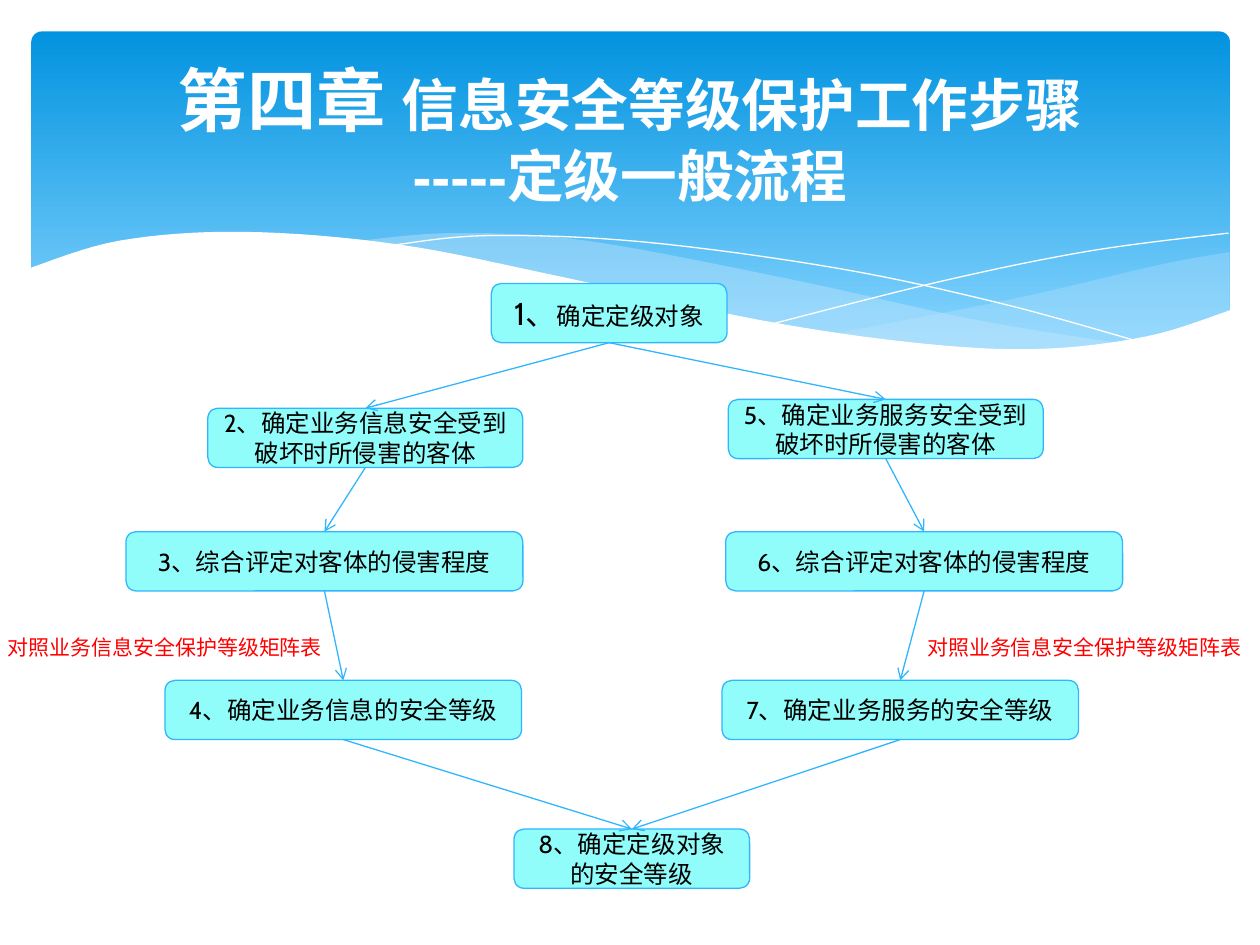
from lxml.etree import SubElement
from pptx import Presentation
from pptx.dml.color import RGBColor
from pptx.enum.shapes import MSO_CONNECTOR, MSO_SHAPE
from pptx.enum.text import MSO_ANCHOR, PP_ALIGN
from pptx.oxml.ns import qn
from pptx.util import Inches, Pt

COLORS = {
    "sky_top": "0293E0", "sky_bottom": "83D3FE", "wave": "C6E7FC", "white": "FFFFFF",
    "box": "91FDFA", "line": "31B6FD", "text": "000000", "label": "FF0000",
}
BODY_FONT, CJK_FONT, TITLE_CJK_FONT = "Cabin", "Noto Sans CJK SC", "Noto Sans CJK JP"

TITLE_LINES = [
    [("第四章 ", 39.6, CJK_FONT), ("信息安全等级保护工作步骤", 32.4, CJK_FONT)],
    [("-----", 32.4, CJK_FONT), ("定级一般流程", 32.4, TITLE_CJK_FONT)],
]

# Each step: number, left, top, text; the width depends on the kind of step
BOX_HEIGHT = 0.47
WIDTHS = {"object": 1.87, "victim": 2.5, "degree": 3.15, "level": 2.83}
STEPS = [
    (1, "object", 3.9, 2.25, "确定定级对象"),
    (2, "victim", 1.65, 3.24, "确定业务信息安全受到破坏时所侵害的客体"),
    (3, "degree", 1, 4.22, "综合评定对客体的侵害程度"),
    (4, "level", 1.31, 5.4, "确定业务信息的安全等级"),
    (8, "object", 4.08, 6.58, "确定定级对象的安全等级"),
    (5, "victim", 5.78, 3.17, "确定业务服务安全受到破坏时所侵害的客体"),
    (6, "degree", 5.76, 4.22, "综合评定对客体的侵害程度"),
    (7, "level", 5.73, 5.4, "确定业务服务的安全等级"),
]
BRANCHES = [(1, 2, 3, 4, 8), (1, 5, 6, 7, 8)]
MATRIX_LABEL = "对照业务信息安全保护等级矩阵表"
LABEL_LEFTS = [-1.04, 6.26]

# Each wave: smooth edges given by a few knots, fill colour (None: thin line), opacity
WAVES = [
    ([[(6.61, 2.65), (8.05, 2.37), (9.21, 2.1), (9.76, 2)],
      [(9.76, 2.47), (8.9, 2.72), (8.03, 2.78), (6.61, 2.65)]], "wave", 29),
    ([[(2.86, 1.91), (3.61, 1.85), (4.65, 1.91), (6.29, 2.22), (7.75, 2.54), (8.93, 2.73)],
      [(8.93, 2.73), (8.07, 2.78), (6.65, 2.66), (4.49, 2.22), (2.86, 1.91)]], "wave", 40),
    ([[(3.09, 1.95), (3.87, 1.87), (5.1, 1.92), (6.65, 2.13), (7.95, 2.41), (9.07, 2.72)]],
     None, 100),
    ([[(6.13, 2.57), (7.48, 2.23), (8.66, 1.99), (9.75, 1.85)]], None, 100),
    ([[(0.23, 2.13), (0.95, 1.91), (1.93, 1.84), (3.16, 1.94), (4.47, 2.2), (6.03, 2.54),
       (7.26, 2.72), (8.23, 2.77), (9.1, 2.67), (9.77, 2.46)],
      [(9.77, 3.29), (0.23, 3.29)]], "white", 100),
]
CURVE_STEPS = 8


def rgb(name):
    return RGBColor.from_string(COLORS[name])


def smooth(knots):
    """Return points of a Catmull-Rom curve through the knots."""
    padded = [knots[0], *knots, knots[-1]]
    points = [knots[0]]
    for a, b, c, d in zip(padded, padded[1:], padded[2:], padded[3:]):
        for step in range(1, CURVE_STEPS + 1):
            t = step / CURVE_STEPS
            points.append(tuple(
                q + t * ((r - p) + t * (2 * p - 5 * q + 4 * r - s
                                        + t * (3 * q - p - 3 * r + s))) / 2
                for p, q, r, s in zip(a, b, c, d)))
            # the factor 1/2 applies to everything but the starting knot
    return points


def add_run(paragraph, text, size, font, color, cjk_font=CJK_FONT, bold=False):
    run = paragraph.add_run()
    run.text = text
    run.font.size, run.font.name, run.font.bold = Pt(size), font, bold
    run.font.color.rgb = rgb(color)
    SubElement(run.font._element, qn("a:ea"), typeface=cjk_font)


def add_rounded_box(slide, left, top, width, height):
    box = slide.shapes.add_shape(
        MSO_SHAPE.ROUNDED_RECTANGLE, *map(Inches, (left, top, width, height)))
    box.shadow.inherit = False
    return box


def add_header_panel(slide):
    panel = add_rounded_box(slide, 0.25, 0.25, 9.51, 2.7)
    panel.adjustments[0] = 0.03
    panel.line.fill.background()
    panel.fill.gradient()
    panel.fill.gradient_angle = 270
    stops = [("sky_top", 0), ("sky_bottom", 0.9)]
    for stop, (color, position) in zip(panel.fill.gradient_stops, stops):
        stop.color.rgb, stop.position = rgb(color), position


def add_wave(slide, edges, color, opacity):
    points = [(Inches(x), Inches(y)) for edge in edges for x, y in smooth(edge)]
    builder = slide.shapes.build_freeform(*points[0])
    builder.add_line_segments(points[1:], close=color is not None)
    wave = builder.convert_to_shape()
    wave.shadow.inherit = False
    if color is None:
        wave.fill.background()
        wave.line.color.rgb, wave.line.width = rgb("white"), Pt(0)
        return
    wave.line.fill.background()
    wave.fill.solid()
    wave.fill.fore_color.rgb = rgb(color)
    if opacity < 100:
        color_element = wave._element.spPr.find(qn("a:solidFill"))[0]
        SubElement(color_element, qn("a:alpha"), val=str(opacity * 1000))


def fill_title(slide):
    title = slide.shapes.title
    title.left, title.top, title.width, title.height = map(Inches, (0.5, 0.37, 9, 1.37))
    title.text_frame.vertical_anchor = MSO_ANCHOR.MIDDLE
    paragraph = title.text_frame.paragraphs[0]
    paragraph.alignment = PP_ALIGN.CENTER
    for index, line in enumerate(TITLE_LINES):
        if index:
            paragraph.add_line_break()
        for text, size, cjk_font in line:
            add_run(paragraph, text, size, "Arial", "white", cjk_font, bold=True)
    slide.shapes._spTree.append(title._element)  # in front of the header panel


def add_step(slide, number, kind, left, top, text):
    box = add_rounded_box(slide, left, top, WIDTHS[kind], BOX_HEIGHT)
    box.fill.solid()
    box.fill.fore_color.rgb = rgb("box")
    box.line.color.rgb, box.line.width = rgb("line"), Pt(0.75)
    box.text_frame.vertical_anchor = MSO_ANCHOR.MIDDLE
    paragraph = box.text_frame.paragraphs[0]
    paragraph.alignment = PP_ALIGN.CENTER
    if number == 1:
        add_run(paragraph, f"{number}、", 18, BODY_FONT, "text")
    else:
        text = f"{number}、{text}"
    add_run(paragraph, text, 14, BODY_FONT, "text")
    return box


def add_arrow(slide, start, end):
    arrow = slide.shapes.add_connector(MSO_CONNECTOR.STRAIGHT, 0, 0, 0, 0)
    arrow.begin_connect(start, 2)
    arrow.end_connect(end, 0)
    arrow.line.color.rgb, arrow.line.width = rgb("line"), Pt(0.75)
    SubElement(arrow.line._get_or_add_ln(), qn("a:tailEnd"), type="arrow")
    SubElement(arrow._element.spPr, qn("a:effectLst"))


def add_label(slide, left):
    label = slide.shapes.add_textbox(*map(Inches, (left, 5.01, 3.74, 0.28)))
    label.text_frame.word_wrap = False
    paragraph = label.text_frame.paragraphs[0]
    paragraph.line_spacing = 0.9
    properties = paragraph._p.get_or_add_pPr()
    properties.set("marL", str(Inches(1.25)))
    properties.set("indent", str(Inches(-0.25)))
    add_run(paragraph, MATRIX_LABEL, 12, CJK_FONT, "label")


def main():
    presentation = Presentation()
    presentation.slide_width, presentation.slide_height = Inches(10), Inches(7.5)
    slide = presentation.slides.add_slide(presentation.slide_layouts[5])
    add_header_panel(slide)
    for wave in WAVES:
        add_wave(slide, *wave)
    fill_title(slide)
    boxes = {step[0]: add_step(slide, *step) for step in STEPS}
    for branch in BRANCHES:
        for start, end in zip(branch, branch[1:]):
            add_arrow(slide, boxes[start], boxes[end])
    for left in LABEL_LEFTS:
        add_label(slide, left)
    presentation.save("out.pptx")


if __name__ == "__main__":
    main()
